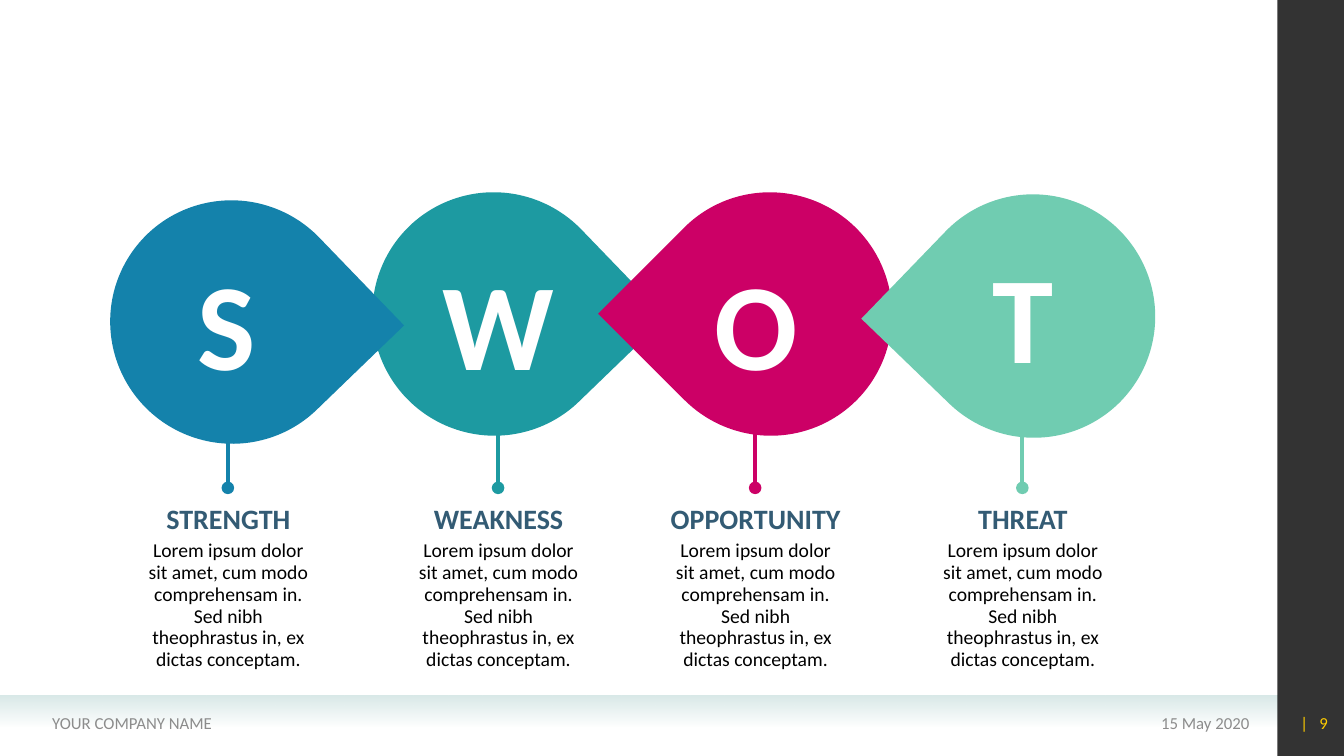
from pptx import Presentation
from pptx.dml.color import RGBColor
from pptx.enum.shapes import MSO_CONNECTOR, MSO_SHAPE
from pptx.enum.text import MSO_ANCHOR, MSO_AUTO_SIZE, PP_ALIGN
from pptx.oxml.ns import qn
from pptx.util import Emu, Pt
from lxml import etree

PX = 9144  # 100 px to the inch
LEFT, CENTER, RIGHT = PP_ALIGN.LEFT, PP_ALIGN.CENTER, PP_ALIGN.RIGHT
TOP, MIDDLE = MSO_ANCHOR.TOP, MSO_ANCHOR.MIDDLE
RECT, TEARDROP = MSO_SHAPE.RECTANGLE, MSO_SHAPE.TEAR
STRAIGHT = MSO_CONNECTOR.STRAIGHT
FIT, FIXED = MSO_AUTO_SIZE.SHAPE_TO_FIT_TEXT, MSO_AUTO_SIZE.NONE

BODY = ("Lorem ipsum dolor sit amet, cum modo comprehensam in. "
        "Sed nibh theophrastus in, ex dictas conceptam.")

# left, letter, title, colour, drop offset x and y, rotation, letter offset x and y
COLUMNS = [
    (400, "W", "WEAKNESS", "1D9AA1", -31, 1, 46, 0, 50),
    (132, "S", "STRENGTH", "1482AB", -23, 9, 46, -2, 50),
    (655, "O", "OPPORTUNITY", "CC0066", -12, 1, 225, 0, 50),
    (920, "T", "THREAT", "70CCB1", -16, 3, 224, 0, 43),
]


def px(*values):
    return [Emu(round(v * PX)) for v in values]


def rgb(color):
    return RGBColor.from_string(color)


def sub(parent, tag, **attrs):
    return etree.SubElement(parent, qn(tag), attrs)


def add_shape(s, kind, box, color):
    sp = s.shapes.add_shape(kind, *px(*box))
    sp.shadow.inherit = False
    sp.fill.solid()
    sp.fill.fore_color.rgb = rgb(color)
    sp.line.fill.background()
    return sp


def add_text(s, text, box, size, color, bold=False, align=CENTER, anchor=MIDDLE,
             wrap=True, autosize=FIXED, leading=None, before=None):
    tb = s.shapes.add_textbox(*px(*box))
    tf = tb.text_frame
    tf.word_wrap = wrap
    tf.auto_size = autosize
    tf.vertical_anchor = anchor
    p = tf.paragraphs[0]
    p.alignment = align
    if leading:
        p.line_spacing = Pt(leading)
    if before:
        spacing = sub(p._p.get_or_add_pPr(), "a:spcBef")
        sub(spacing, "a:spcPct", val=str(before * 1000))
    r = p.add_run()
    r.text = text
    r.font.name = "Calibri"
    r.font.size = Pt(size)
    r.font.bold = bold
    r.font.color.rgb = rgb(color)


def add_stem(s, x, y1, y2, color):
    c = s.shapes.add_connector(STRAIGHT, *px(x, y1, x, y2))
    c.line.color.rgb = rgb(color)
    c.line.width = Pt(3)
    sub(c.line._get_or_add_ln(), "a:tailEnd", type="oval")
    sub(c._element.spPr, "a:effectLst")


def add_footer(s, x, y, w, h):
    # Band fading to transparent downwards
    band = add_shape(s, RECT, (x, y, w, 31), "D9E9E8")
    band.fill.gradient()
    band.fill.gradient_angle = 270
    for stop, position in zip(band.fill.gradient_stops, (0, 1)):
        stop.color.rgb = rgb("D9E9E8")
        stop.position = position
    sub(band._element.xpath(".//a:srgbClr")[-1], "a:alpha", val="0")
    # Company name and date
    add_text(s, "YOUR COMPANY NAME", (x + 42, y + 7, 490, 40), 12, "8C8C8C", align=LEFT)
    add_text(s, "15 May 2020", (x + w - 357, y + 7, 339, 40), 12, "8C8C8C", align=RIGHT)


def add_sidebar(s, x, y, w, h):
    bar = add_shape(s, RECT, (x, y, w, h), "000000")
    sub(bar._element.xpath(".//a:srgbClr")[0], "a:alpha", val="80000")
    add_text(s, "|   9", (x - 7, y + h - 53, 67, 40), 12, "FFCC00", align=RIGHT)


def add_column(s, x, y, w, h, letter, title, color, drop_dx, drop_dy, rotation,
               letter_dx, letter_dy):
    # Drop with its letter
    drop = add_shape(s, TEARDROP, (x + drop_dx, y + drop_dy, 242, 241), color)
    drop.rotation = rotation
    add_text(s, letter, (x + letter_dx, y + letter_dy, w, 158), 88, "FFFFFF",
             bold=True, wrap=False, autosize=FIT)
    # Stem down to the caption
    add_stem(s, x + w // 2, y + 222, y + 294, color)
    # Title and description
    add_text(s, title, (x, y + 302, w, 44), 20, "335B74", bold=True, wrap=False,
             autosize=FIT)
    add_text(s, BODY, (x, y + 341, w, h - 341), 14, "000000", anchor=TOP,
             autosize=FIT, leading=15.5, before=20)


def main():
    prs = Presentation()
    prs.slide_width, prs.slide_height = px(1333, 750)
    s = prs.slides.add_slide(prs.slide_layouts[6])
    add_footer(s, 0, 690, 1267, 60)
    add_sidebar(s, 1267, 0, 67, 750)
    for left, *parts in COLUMNS:
        add_column(s, left, 190, 189, 486, *parts)
    prs.save("out.pptx")


if __name__ == "__main__":
    main()
